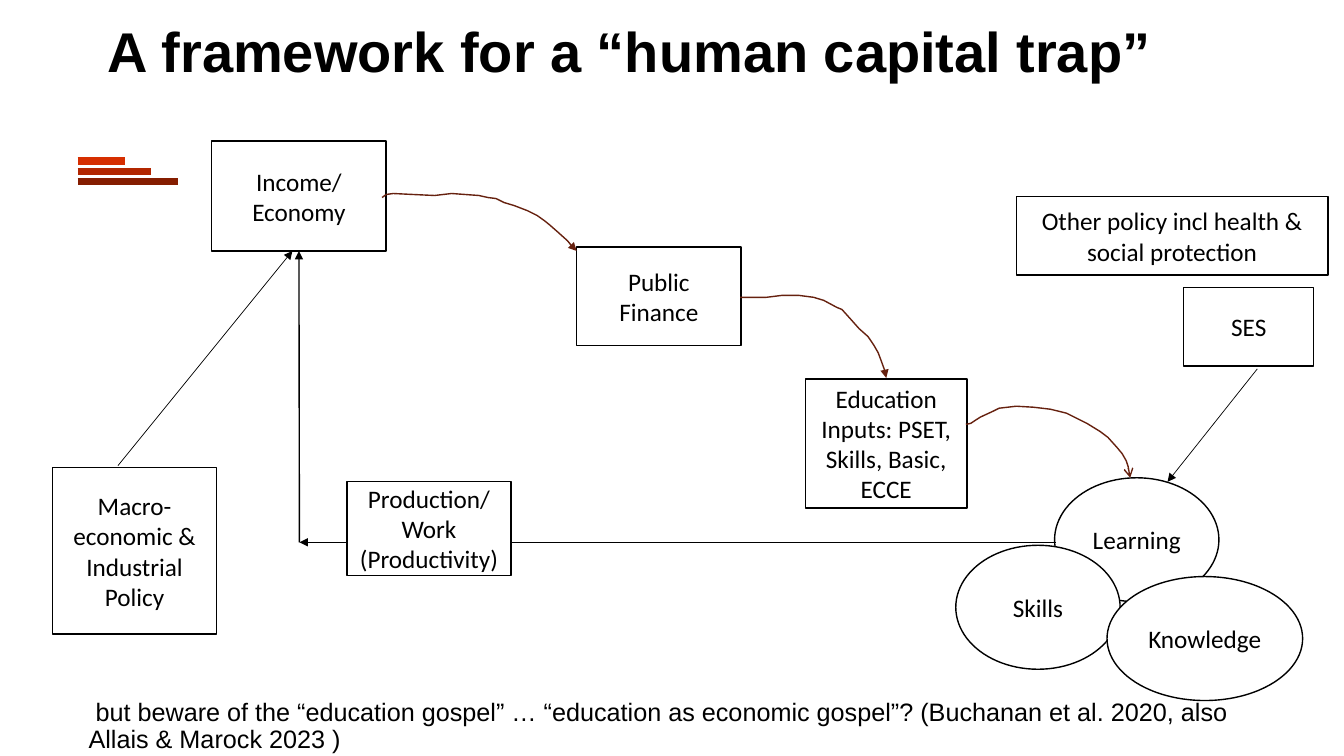
import pptx
import pptx.util
from pptx.dml.color import RGBColor
from pptx.enum.shapes import MSO_CONNECTOR, MSO_SHAPE
from pptx.enum.text import MSO_ANCHOR, MSO_AUTO_SIZE, PP_ALIGN
from pptx.oxml.ns import qn
from lxml import etree

Inches, Pt = pptx.util.Inches, pptx.util.Pt


class Theme:
    ink = RGBColor(0x00, 0x00, 0x00)
    paper = RGBColor(0xFF, 0xFF, 0xFF)
    curve = RGBColor(0x66, 0x21, 0x0F)
    emblem = [RGBColor(0xD6, 0x2E, 0x00), RGBColor(0xB2, 0x26, 0x00),
              RGBColor(0x85, 0x1D, 0x00)]
    title = {"name": "Arial", "size": Pt(40), "bold": True}
    note = {"name": "Arial", "size": Pt(18)}
    label = {"name": "Calibri", "size": Pt(18)}


# Node: kind, text, left, top, width, height within the diagram
RECT, OVAL = MSO_SHAPE.RECTANGLE, MSO_SHAPE.FLOWCHART_CONNECTOR
BACK_NODES = [
    (OVAL, "Learning", 9.96, 3.34, 1.63, 1.23),
    (RECT, "Public Finance", 5.22, 1.05, 1.63, 0.98),
    (RECT, "Income/ Economy", 1.6, 0, 1.73, 1.09),
    (RECT, "Education Inputs: PSET, Skills, Basic, ECCE", 7.49, 2.36, 1.6, 1.28),
]
FRONT_NODES = [
    (RECT, "Production/Work\n(Productivity)", 2.94, 3.38, 1.63, 0.93),
    (OVAL, "Skills", 8.98, 4.01, 1.63, 1.23),
    (OVAL, "Knowledge", 10.48, 4.32, 1.94, 1.23),
    (RECT, "SES", 11.24, 1.45, 1.29, 0.78),
    (RECT, "Other policy incl health & social protection", 9.58, 0.55, 3.09, 0.78),
    (RECT, "Macro-economic & Industrial Policy", 0.02, 3.24, 1.63, 1.65),
]
# Curve: arrowhead and points within the diagram
CURVES = [
    ("triangle", [  # income to finance
        (3.29, 0.56), (3.33, 0.53), (3.4, 0.52), (3.6, 0.53), (3.81, 0.54),
        (3.98, 0.52), (4.25, 0.54), (4.34, 0.56), (4.42, 0.57), (4.5, 0.61),
        (4.6, 0.64), (4.73, 0.69), (4.83, 0.74), (4.9, 0.79), (4.95, 0.83),
        (5.03, 0.9), (5.13, 0.99), (5.17, 1.04), (5.22, 1.09)]),
    ("triangle", [  # finance to education
        (6.84, 1.55), (7.1, 1.55), (7.26, 1.53), (7.42, 1.53), (7.57, 1.55),
        (7.67, 1.58), (7.8, 1.65), (7.85, 1.67), (7.94, 1.77), (8.02, 1.86),
        (8.11, 1.94), (8.17, 2.03), (8.21, 2.1), (8.24, 2.18), (8.28, 2.29),
        (8.29, 2.35)]),
    ("arrow", [  # education to learning
        (9.08, 2.81), (9.13, 2.8), (9.22, 2.74), (9.35, 2.68), (9.41, 2.65),
        (9.58, 2.63), (9.75, 2.64), (9.92, 2.66), (10.08, 2.7), (10.28, 2.8),
        (10.41, 2.88), (10.49, 2.94), (10.58, 3.04), (10.63, 3.1),
        (10.67, 3.17), (10.69, 3.23), (10.7, 3.31), (10.71, 3.34)]),
]


def write(p, text, style, align):
    p.alignment = align
    r = p.add_run()
    r.text = text
    for name, value in style.items():
        setattr(r.font, name, value)
    r.font.color.rgb = Theme.ink


def set_line(sp, color, width, head=None):
    sp.line.color.rgb = color
    sp.line.width = Pt(width)
    if head:
        ln = sp._element.spPr.find(qn("a:ln"))
        etree.SubElement(ln, qn("a:tailEnd")).set("type", head)


def add_line(s, box, start, end, color, width, head=None):
    x, y = box[:2]
    c = s.shapes.add_connector(
        MSO_CONNECTOR.STRAIGHT, Inches(x + start[0]), Inches(y + start[1]),
        Inches(x + end[0]), Inches(y + end[1]))
    set_line(c, color, width, head)
    etree.SubElement(c._element.spPr, qn("a:effectLst"))
    return c


def add_node(s, box, kind, text, left, top, width, height):
    sp = s.shapes.add_shape(kind, Inches(box[0] + left), Inches(box[1] + top),
                            Inches(width), Inches(height))
    sp.shadow.inherit = False
    sp.fill.solid()
    sp.fill.fore_color.rgb = Theme.paper
    set_line(sp, Theme.ink, 1)
    tf = sp.text_frame
    tf.word_wrap = True
    tf.vertical_anchor = MSO_ANCHOR.MIDDLE
    for i, line in enumerate(text.split("\n")):
        p = tf.add_paragraph() if i else tf.paragraphs[0]
        write(p, line, Theme.label, PP_ALIGN.CENTER)
    return sp


def add_curve(s, box, head, points):
    pts = [(Inches(box[0] + x), Inches(box[1] + y)) for x, y in points]
    builder = s.shapes.build_freeform(*pts[0])
    builder.add_line_segments(pts[1:], close=False)
    sp = builder.convert_to_shape()
    sp.shadow.inherit = False
    sp.fill.background()
    set_line(sp, Theme.curve, 1, head)


def add_emblem(s, box):
    x, y, w, h = box
    for i, (share, color) in enumerate(zip((0.47, 0.73, 1), Theme.emblem)):
        add_line(s, box, (0, i * h / 2), (w * share, i * h / 2), color, 5.5)


def add_title(s, box, text):
    sp = s.shapes.title
    sp.left, sp.top, sp.width, sp.height = map(Inches, box)
    tf = sp.text_frame
    tf.auto_size = MSO_AUTO_SIZE.NONE
    tf.vertical_anchor = MSO_ANCHOR.MIDDLE
    p = tf.paragraphs[0]
    p.line_spacing = 0.9
    write(p, text, Theme.title, PP_ALIGN.LEFT)


def add_diagram(s, box):
    # Nodes behind the arrows
    nodes = {node[1]: add_node(s, box, *node) for node in BACK_NODES}

    # Return path from learning to income
    corner = (2.47, 3.98)
    add_line(s, box, (9.97, 3.98), corner, Theme.ink, 1, "triangle")
    rise = add_line(s, box, corner, (2.47, 1.09), Theme.ink, 1, "triangle")
    rise.end_connect(nodes["Income/ Economy"], 2)

    for head, points in CURVES:
        add_curve(s, box, head, points)

    # Nodes in front, then the outside influences
    for node in FRONT_NODES:
        add_node(s, box, *node)
    for start, end in [((11.97, 2.26), (11.08, 3.38)), ((0.67, 3.22), (2.4, 1.09))]:
        add_line(s, box, start, end, Theme.ink, 0.5, "triangle")


def add_note(s, box, text):
    tf = s.shapes.add_textbox(*map(Inches, box)).text_frame
    tf.word_wrap = True
    p = tf.paragraphs[0]
    p.line_spacing = 0.9
    write(p, text, Theme.note, PP_ALIGN.LEFT)


def main():
    prs = pptx.Presentation()
    prs.slide_width, prs.slide_height = Inches(13.33), Inches(7.5)
    s = prs.slides.add_slide(prs.slide_layouts[5])
    add_emblem(s, (0.77, 1.6, 1, 0.2))
    add_title(s, (0.97, 0.01, 11.5, 1.05), "A framework for a “human capital trap”")
    add_diagram(s, (0.5, 1.4, 12.67, 5.55))
    add_note(s, (0.78, 6.89, 11.5, 0.6),
             " but beware of the “education gospel” … “education as economic gospel”? "
             "(Buchanan et al. 2020, also Allais & Marock 2023 )")
    prs.save("out.pptx")


if __name__ == "__main__":
    main()
